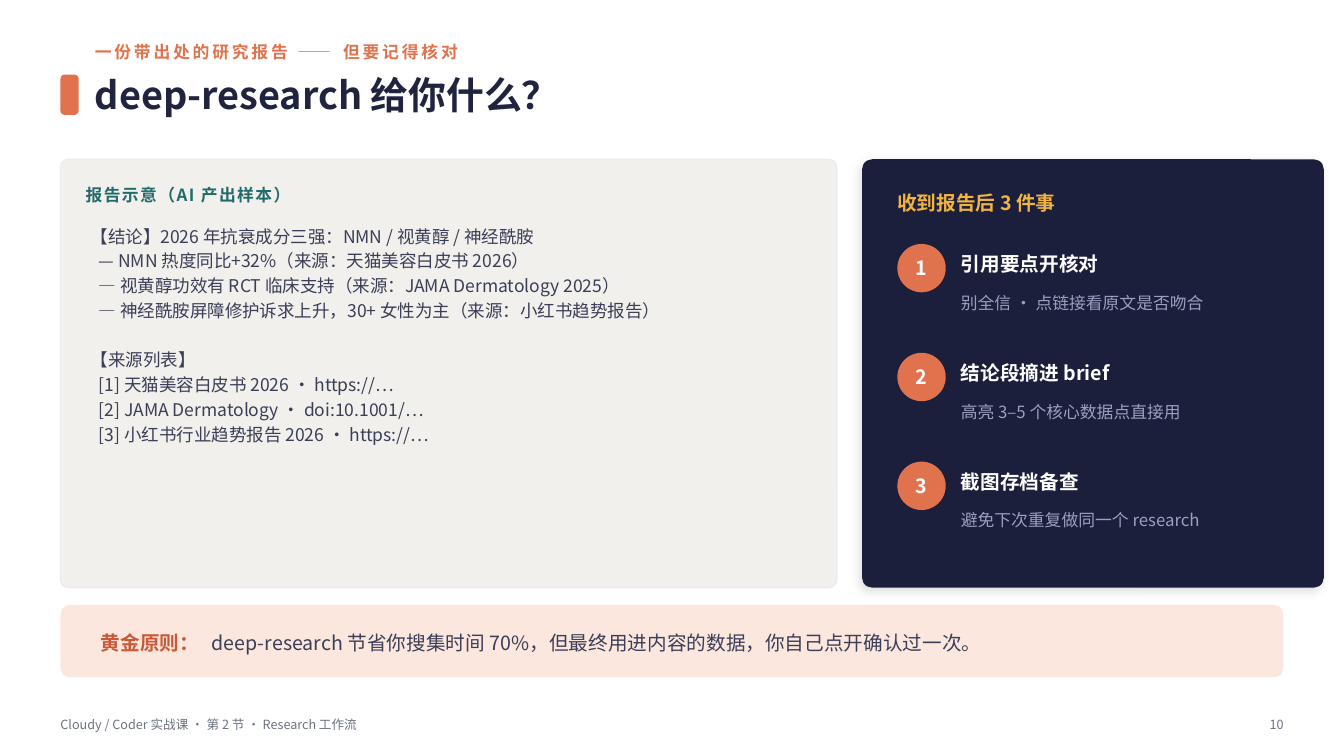
from lxml import etree
from pptx import Presentation
from pptx.dml.color import RGBColor
from pptx.enum import shapes, text
from pptx.oxml import ns
from pptx.util import Inches, Pt

FONT = "Noto Sans CJK SC"
ORANGE, NAVY, INK, GREY = "E0734D", "1B1F3B", "3A3E57", "6B7280"
WHITE, TEAL, GOLD, MIST = "FFFFFF", "236B6B", "F2B441", "9AA0C0"

KICKER = "一份带出处的研究报告 —— 但要记得核对"
TITLE = "deep-research 给你什么？"
SAMPLE = "报告示意（AI 产出样本）"
REPORT = [
    ("【结论】2026 年抗衰成分三强：NMN / 视黄醇 / 神经酰胺", [
        "— NMN 热度同比+32%（来源：天猫美容白皮书 2026）",
        "— 视黄醇功效有 RCT 临床支持（来源：JAMA Dermatology 2025）",
        "— 神经酰胺屏障修护诉求上升，30+ 女性为主（来源：小红书趋势报告）",
    ]),
    ("【来源列表】", [
        "[1] 天猫美容白皮书 2026 · https://…",
        "[2] JAMA Dermatology · doi:10.1001/…",
        "[3] 小红书行业趋势报告 2026 · https://…",
    ]),
]
TODO = "收到报告后 3 件事"
STEPS = [
    ("引用要点开核对", "别全信 · 点链接看原文是否吻合"),
    ("结论段摘进 brief", "高亮 3–5 个核心数据点直接用"),
    ("截图存档备查", "避免下次重复做同一个 research"),
]
RULE = ("黄金原则：",
        "deep-research 节省你搜集时间 70%，但最终用进内容的数据，你自己点开确认过一次。")
FOOT = "Cloudy / Coder 实战课 · 第 2 节 · Research 工作流"
PAGE = "10"

LEFT, TOP, TALL = 0.6, 1.58, 4.25
SIDE, DOT, PITCH = 8.9, 0.48, 1.08
RADIUS = 0.08

prs = Presentation()
prs.slide_width, prs.slide_height = Inches(13.33), Inches(7.5)
slide = prs.slides.add_slide(prs.slide_layouts[6])


def color(code):
    return RGBColor.from_string(code)


def child(node, tag, **attrs):
    return etree.SubElement(node, ns.qn(tag), attrs)


def shape(kind, box, fill, line=None, round=None):
    item = slide.shapes.add_shape(kind, *map(Inches, box))
    item.shadow.inherit = False
    item.fill.solid()
    item.fill.fore_color.rgb = color(fill)
    if line:
        item.line.color.rgb = color(line)
        item.line.width = Pt(1)
    else:
        item.line.fill.background()
    if round:
        item.adjustments[0] = round / min(box[2:])
    return item


def panel(box, fill, line=None, round=RADIUS):
    kind = shapes.MSO_SHAPE.ROUNDED_RECTANGLE
    return shape(kind, box, fill, line, round)


def frame(box, anchor=text.MSO_ANCHOR.MIDDLE):
    """Add an empty wrapping text box without margins."""
    body = slide.shapes.add_textbox(*map(Inches, box)).text_frame
    form = dict(word_wrap=True, vertical_anchor=anchor, margin_left=0,
                margin_top=0, margin_right=0, margin_bottom=0)
    for key, value in form.items():
        setattr(body, key, value)
    return body


def write(para, words, size, ink, bold=False, track=0):
    run = para.add_run()
    run.text = words
    form = dict(name=FONT, size=Pt(size), bold=bold)
    for key, value in form.items():
        setattr(run.font, key, value)
    run.font.color.rgb = color(ink)
    props = run.font._element
    child(props, "a:ea", typeface=FONT)
    if track:
        props.set("spc", str(track * 100))


def label(box, words, size, ink, bold=False, track=0, align=None):
    para = frame(box).paragraphs[0]
    para.alignment = align
    write(para, words, size, ink, bold, track)


def shade(item):
    """Give a shape a soft outer shadow."""
    effect = item._element.spPr.find(ns.qn("a:effectLst"))
    outer = child(effect, "a:outerShdw", blurRad=str(Pt(7)), dist=str(Pt(3)),
                  dir=str(135 * 60000), algn="bl", rotWithShape="0")
    tint = child(outer, "a:srgbClr", val="000000")
    child(tint, "a:alpha", val="12000")


def head():
    label((0.94, 0.36, 11.79, 0.3), KICKER, 12, ORANGE, True, 2)
    panel((LEFT, 0.74, 0.18, 0.4), ORANGE, round=0.04)
    label((0.94, 0.64, 11.79, 0.6), TITLE, 27, "20243F", True)


def report():
    panel((LEFT, TOP, 7.7, TALL), "F2F0EC", "EAECF1")
    label((0.85, 1.76, 7.2, 0.35), SAMPLE, 12, TEAL, True, 1)
    body = frame((0.9, 2.2, 7.1, 3.45), text.MSO_ANCHOR.TOP)
    rows = [(line, n, i) for n, (top, subs) in enumerate(REPORT)
            for i, line in enumerate([top] + subs)]
    for k, (line, n, i) in enumerate(rows):
        para = body.add_paragraph() if k else body.paragraphs[0]
        para.line_spacing = 1.18
        if i:
            para._p.get_or_add_pPr().set("marL", str(Inches(0.08)))
        elif n:
            para.space_before = Pt(17.7)
        write(para, line, 12.5, INK)


def steps():
    shade(panel((8.55, TOP, 4.58, TALL), NAVY, round=0.1))
    label((SIDE, 1.82, 4, 0.38), TODO, 14, GOLD, True)
    for n, (name, hint) in enumerate(STEPS):
        y, x = 2.42 + n * PITCH, SIDE + DOT + 0.15
        dot = (SIDE, y, DOT, DOT)
        shape(shapes.MSO_SHAPE.OVAL, dot, ORANGE)
        label(dot, str(n + 1), 14, WHITE, True, align=text.PP_ALIGN.CENTER)
        label((x, y + 0.02, 3.5, 0.35), name, 14, WHITE, True)
        label((x, y + 0.42, 3.5, 0.32), hint, 12, MIST)


def rule():
    panel((LEFT, 6, 12.13, 0.72), "FBE7DE", round=0.1)
    para = frame((1, 6, 11.33, 0.72)).paragraphs[0]
    tabs = child(para._p.get_or_add_pPr(), "a:tabLst")
    child(tabs, "a:tab", pos=str(Inches(1.1)), algn="l")
    para.line_spacing = 1.1
    write(para, RULE[0] + "\t", 14, "C85A38", True)
    write(para, RULE[1], 14, INK)


def foot():
    label((LEFT, 7.04, 9, 0.3), FOOT, 9, GREY)
    label((12.03, 7.04, 0.7, 0.3), PAGE, 9, GREY, align=text.PP_ALIGN.RIGHT)


if __name__ == "__main__":
    for part in (head, report, steps, rule, foot):
        part()
    prs.save("out.pptx")
